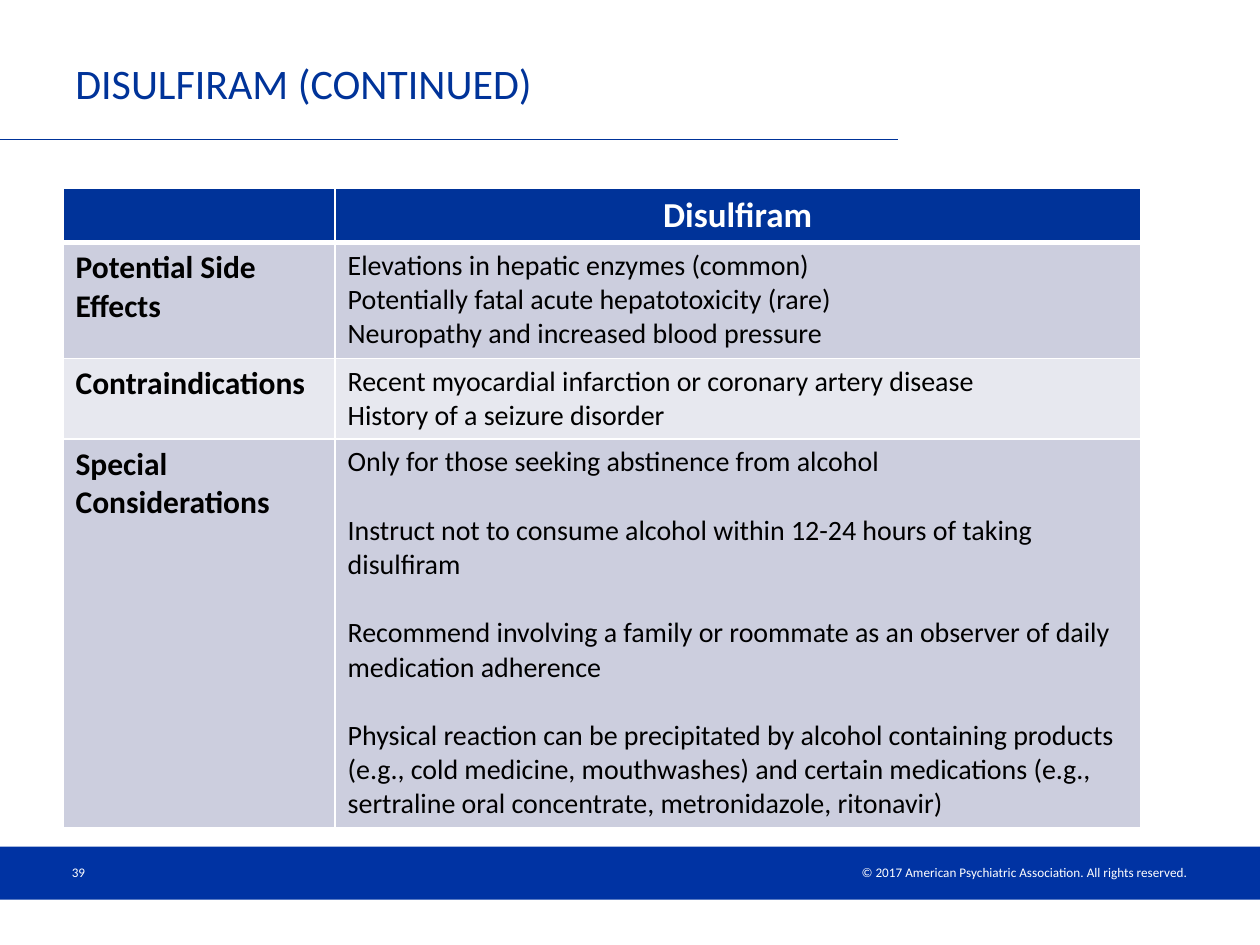
from lxml import etree
from pptx import Presentation
from pptx.dml.color import RGBColor
from pptx.enum.shapes import MSO_CONNECTOR, MSO_SHAPE
from pptx.enum.text import MSO_ANCHOR, PP_ALIGN
from pptx.oxml.ns import qn
from pptx.util import Inches, Pt

COLORS = {
    "title": "003399",
    "footer": "0033A3",
    "white": "FFFFFF",
    "text": "000000",
    "dark_band": "CCCEDE",
    "light_band": "E7E8EF",
}
FONT = "Calibri"

TITLE = "DISULFIRAM (CONTINUED)"
COPYRIGHT = "© 2017 American Psychiatric Association. All rights reserved."
PAGE_NUMBER = "39"
DRUG = "Disulfiram"

TOPICS = [
    ("Potential Side Effects", 0.92, 0, [
        "Elevations in hepatic enzymes (common)",
        "Potentially fatal acute hepatotoxicity (rare)",
        "Neuropathy and increased blood pressure",
    ]),
    ("Contraindications", 0.64, 0, [
        "Recent myocardial infarction or coronary artery disease",
        "History of a seizure disorder",
    ]),
    ("Special Considerations", 3.09, 19.5, [
        "Only for those seeking abstinence from alcohol",
        "Instruct not to consume alcohol within 12-24 hours of taking disulfiram",
        "Recommend involving a family or roommate as an observer of daily "
        "medication adherence",
        "Physical reaction can be precipitated by alcohol containing products "
        "(e.g., cold medicine, mouthwashes) and certain medications (e.g., "
        "sertraline oral concentrate, metronidazole, ritonavir)",
    ]),
]
COLUMN_WIDTHS = [2.16, 6.39]
HEADER_HEIGHT = 0.43


def color(name):
    return RGBColor.from_string(COLORS[name])


def write(frame, lines, size, color_name, bold=False, align=PP_ALIGN.LEFT, gap=0):
    for i, line in enumerate(lines):
        paragraph = frame.paragraphs[0] if i == 0 else frame.add_paragraph()
        paragraph.text = line
        paragraph.alignment = align
        if i and gap:
            paragraph.space_before = Pt(gap)
        paragraph.font.name = FONT
        paragraph.font.size = Pt(size)
        paragraph.font.bold = bold
        paragraph.font.color.rgb = color(color_name)


def add_label(slide, text, box, size, color_name, align=PP_ALIGN.LEFT, inset=0.1):
    frame = slide.shapes.add_textbox(*map(Inches, box)).text_frame
    frame.word_wrap = True
    frame.vertical_anchor = MSO_ANCHOR.MIDDLE
    frame.margin_left = frame.margin_right = Inches(inset)
    write(frame, [text], size, color_name, align=align)


def style_cell(cell, fill, top=1, bottom=1):
    properties = cell._tc.get_or_add_tcPr()
    for side, width in (("L", 1), ("R", 1), ("T", top), ("B", bottom)):
        border = etree.SubElement(properties, qn(f"a:ln{side}"), w=str(Pt(width)))
        solid = etree.SubElement(border, qn("a:solidFill"))
        etree.SubElement(solid, qn("a:srgbClr"), val=COLORS["white"])
    cell.fill.solid()
    cell.fill.fore_color.rgb = color(fill)


def add_frame(slide):
    footer = slide.shapes.add_shape(
        MSO_SHAPE.RECTANGLE, Inches(0), Inches(6.72), Inches(10), Inches(0.42))
    footer.shadow.inherit = False
    footer.fill.solid()
    footer.fill.fore_color.rgb = color("footer")
    footer.line.fill.background()

    rule = slide.shapes.add_connector(
        MSO_CONNECTOR.STRAIGHT, Inches(0), Inches(1.11), Inches(7.13), Inches(1.11))
    rule.line.color.rgb = color("title")
    rule.line.width = Pt(0.75)
    etree.SubElement(rule._element.spPr, qn("a:effectLst"))

    add_label(slide, COPYRIGHT, (5.18, 6.81, 4.34, 0.23), 7.5, "white", PP_ALIGN.RIGHT)
    add_label(slide, PAGE_NUMBER, (0.5, 6.72, 2.33, 0.4), 7.5, "white", inset=0.07)
    add_label(slide, TITLE, (0.5, 0.34, 6.63, 0.64), 24, "title")


def add_topics(slide):
    heights = [HEADER_HEIGHT] + [height for _, height, _, _ in TOPICS]
    table = slide.shapes.add_table(
        len(heights), len(COLUMN_WIDTHS), Inches(0.5), Inches(1.49),
        Inches(sum(COLUMN_WIDTHS)), Inches(sum(heights))).table
    for column, width in zip(table.columns, COLUMN_WIDTHS):
        column.width = Inches(width)
    for row, height in zip(table.rows, heights):
        row.height = Inches(height)

    for cell in table.rows[0].cells:
        style_cell(cell, "title", bottom=3)
    write(table.cell(0, 1).text_frame, [DRUG], 20, "white", True, PP_ALIGN.CENTER)

    for i, (topic, _, gap, points) in enumerate(TOPICS, 1):
        for cell in table.rows[i].cells:
            style_cell(cell, "dark_band" if i % 2 else "light_band", top=3 if i == 1 else 1)
        write(table.cell(i, 0).text_frame, [topic], 18, "text", True)
        write(table.cell(i, 1).text_frame, points, 16, "text", gap=gap)


def main():
    deck = Presentation()
    deck.slide_width, deck.slide_height = Inches(10), Inches(7.5)
    slide = deck.slides.add_slide(deck.slide_layouts[6])
    add_frame(slide)
    add_topics(slide)
    deck.save("out.pptx")


if __name__ == "__main__":
    main()
